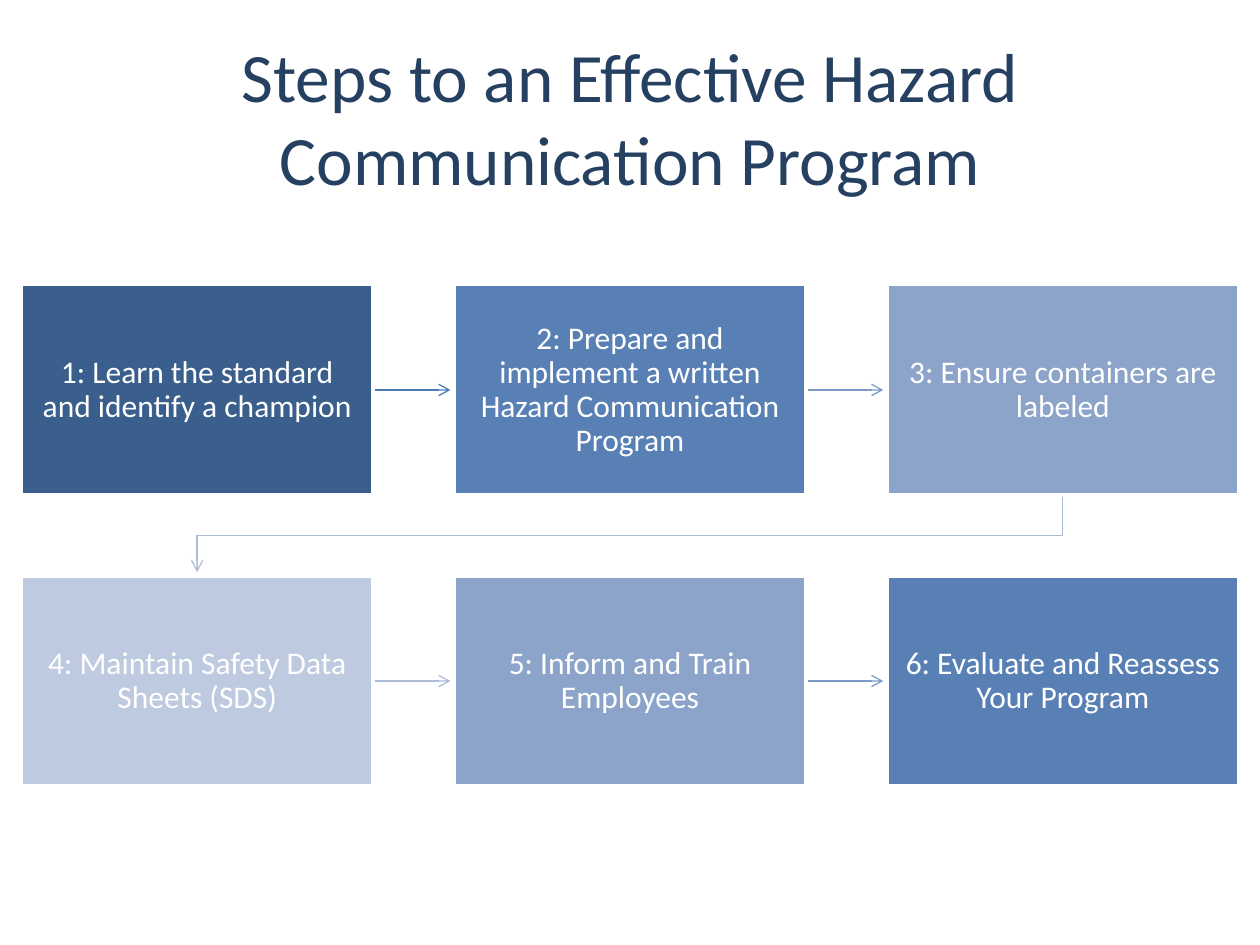
from lxml import etree
from pptx import Presentation
from pptx.dml.color import RGBColor
from pptx.enum import shapes, text
from pptx.oxml.ns import qn
from pptx.util import Inches, Pt

FONT = "Calibri"
WHITE = RGBColor(0xFF, 0xFF, 0xFF)
TITLE_NAVY = RGBColor(0x25, 0x40, 0x61)
NAVY = RGBColor(0x3A, 0x5F, 0x8C)
BLUE = RGBColor(0x59, 0x80, 0xB5)
SOFT_BLUE = RGBColor(0x8C, 0xA4, 0xC9)
PALE_BLUE = RGBColor(0xBE, 0xCA, 0xDF)
ARROW_DARK = RGBColor(0x4B, 0x7B, 0xB5)
ARROW_MID = RGBColor(0x7C, 0x9A, 0xC5)
ARROW_PALE = RGBColor(0xAC, 0xBC, 0xD8)

SLIDE_W, SLIDE_H = 10, 7.5
COLS = 3
BOX_W, BOX_H = 2.79, 1.67
MARGIN, TOP = 0.17, 2.26
COL_STEP = (SLIDE_W - 2 * MARGIN - BOX_W) / (COLS - 1)
ROW_STEP = 2.31
ARROW_GAP = 0.03  # space between an arrowhead and the next box

# Step text, box fill, colour of the arrow to the next step
STEPS = [
    ("1: Learn the standard and identify a champion", NAVY, ARROW_DARK),
    ("2: Prepare and implement a written Hazard Communication Program",
     BLUE, ARROW_MID),
    ("3: Ensure containers are labeled", SOFT_BLUE, ARROW_PALE),
    ("4: Maintain Safety Data Sheets (SDS)", PALE_BLUE, ARROW_PALE),
    ("5: Inform and Train Employees", SOFT_BLUE, ARROW_MID),
    ("6: Evaluate and Reassess Your Program", BLUE, None),
]


def box_origin(index):
    row, col = divmod(index, COLS)
    return MARGIN + col * COL_STEP, TOP + row * ROW_STEP


def write_text(sp, words, size, color):
    """Put one centred run in the shape and return its paragraph."""
    tf = sp.text_frame
    tf.word_wrap = True
    tf.vertical_anchor = text.MSO_ANCHOR.MIDDLE
    p = tf.paragraphs[0]
    p.alignment = text.PP_ALIGN.CENTER
    r = p.add_run()
    r.text = words
    r.font.name = FONT
    r.font.size = Pt(size)
    r.font.color.rgb = color
    return p


def add_title(s, words):
    sp = s.shapes.add_textbox(Inches(0.5), Inches(0.3), Inches(9), Inches(1.25))
    write_text(sp, words, 39.6, TITLE_NAVY)


def add_step(s, index, words, fill):
    x, y = box_origin(index)
    sp = s.shapes.add_shape(shapes.MSO_SHAPE.RECTANGLE, Inches(x), Inches(y),
                            Inches(BOX_W), Inches(BOX_H))
    sp.shadow.inherit = False
    sp.fill.solid()
    sp.fill.fore_color.rgb = fill
    sp.line.color.rgb = WHITE
    sp.line.width = Pt(2)
    tf = sp.text_frame
    tf.margin_left = tf.margin_right = Inches(0.14)
    tf.margin_top = tf.margin_bottom = Inches(0.14)
    write_text(sp, words, 18, WHITE).line_spacing = 0.9


def style_arrow(sp, color):
    sp.line.color.rgb = color
    sp.line.width = Pt(0.75)
    etree.SubElement(sp.line._get_or_add_ln(), qn("a:tailEnd"), type="arrow")


def add_straight_arrow(s, index, color):
    """Arrow from a step to its right-hand neighbour."""
    x, y = box_origin(index)
    mid = Inches(y + BOX_H / 2)
    sp = s.shapes.add_connector(
        shapes.MSO_CONNECTOR.STRAIGHT, Inches(x + BOX_W), mid,
        Inches(x + COL_STEP - ARROW_GAP), mid)
    style_arrow(sp, color)
    etree.SubElement(sp._element.spPr, qn("a:effectLst"))


def add_wrap_arrow(s, index, color):
    """Arrow from the end of a row to the start of the next."""
    x1, y1 = box_origin(index)
    x2, y2 = box_origin(index + 1)
    x1, x2, y1 = x1 + BOX_W / 2, x2 + BOX_W / 2, y1 + BOX_H
    mid = (y1 + y2) / 2
    route = [(x1, mid), (x2, mid), (x2, y2 - ARROW_GAP)]
    builder = s.shapes.build_freeform(Inches(x1), Inches(y1))
    builder.add_line_segments([(Inches(x), Inches(y)) for x, y in route],
                              close=False)
    sp = builder.convert_to_shape()
    sp.shadow.inherit = False
    sp.fill.background()
    style_arrow(sp, color)


def main():
    prs = Presentation()
    prs.slide_width, prs.slide_height = Inches(SLIDE_W), Inches(SLIDE_H)
    s = prs.slides.add_slide(prs.slide_layouts[6])
    for i, (words, fill, arrow) in enumerate(STEPS):
        if arrow is not None:
            ends_row = i % COLS == COLS - 1
            add_arrow = add_wrap_arrow if ends_row else add_straight_arrow
            add_arrow(s, i, arrow)
        add_step(s, i, words, fill)
    add_title(s, "Steps to an Effective Hazard Communication Program")
    prs.save("out.pptx")


if __name__ == "__main__":
    main()
